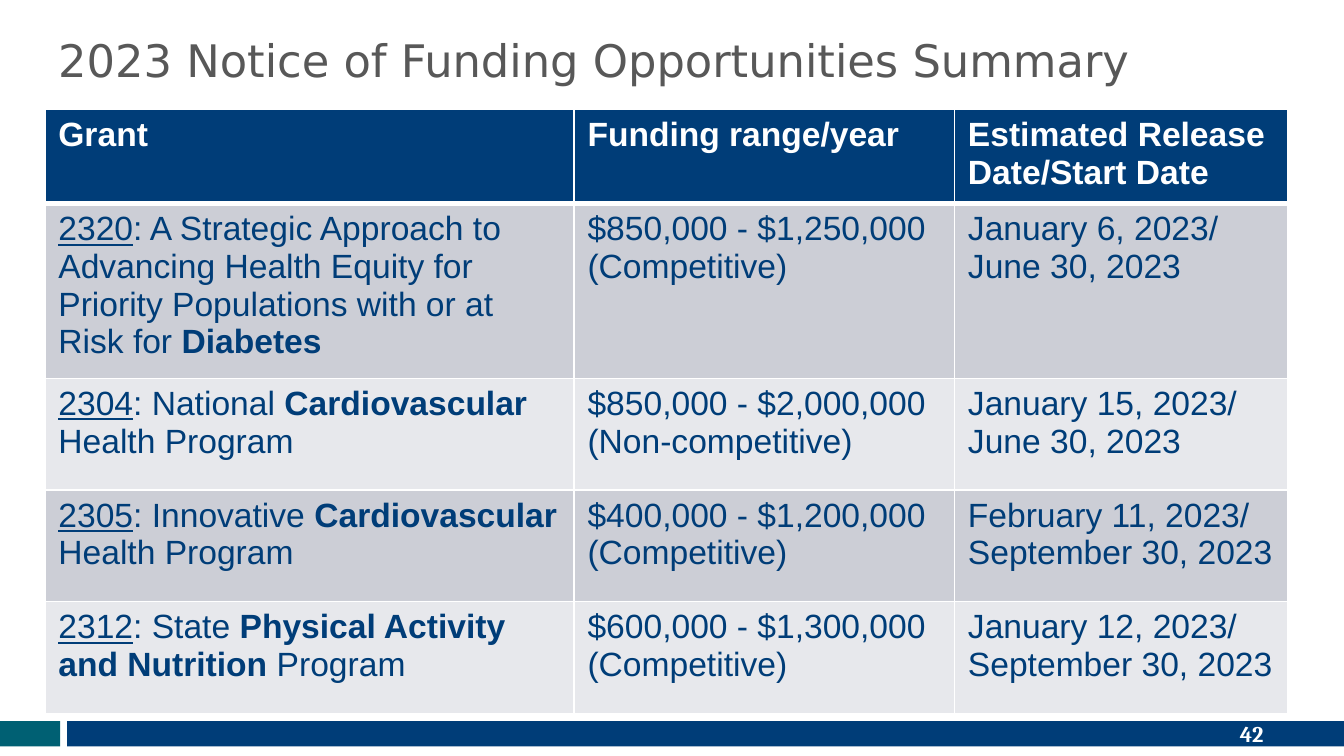
from dataclasses import dataclass

from pptx import Presentation
from pptx.dml.color import RGBColor
from pptx.enum import shapes, text
from pptx.oxml import parse_xml
from pptx.oxml import ns
from pptx.util import Cm, Pt


@dataclass(frozen=True)
class Theme:
    navy: str = "003D78"
    teal: str = "006073"
    grey: str = "585858"
    white: str = "FFFFFF"
    bands: tuple = ("CCCED6", "E7E8EC")
    title_font: str = "DejaVu Sans"
    body_font: str = "Arial"
    number_font: str = "Cambria"
    title_size: int = 24
    body_size: int = 18
    number_size: int = 12


THEME = Theme()

HEADINGS = ("Grant", "Funding range/year", "Estimated Release Date/Start Date")
# Each grant: number, words before the bold topic, topic, words after it;
# then the paragraphs of the funding and date cells
GRANTS = (
    (("2320", ": A Strategic Approach to Advancing Health Equity for "
      "Priority Populations with or at Risk for ", "Diabetes", ""),
     ("$850,000 - $1,250,000", "(Competitive)"),
     ("January 6, 2023/", "June 30, 2023")),
    (("2304", ": National ", "Cardiovascular", " Health Program"),
     ("$850,000 - $2,000,000", "(Non-competitive)"),
     ("January 15, 2023/", "June 30, 2023")),
    (("2305", ": Innovative ", "Cardiovascular", " Health Program"),
     ("$400,000 - $1,200,000 (Competitive)",),
     ("February 11, 2023/", "September 30, 2023")),
    (("2312", ": State ", "Physical Activity and Nutrition", " Program"),
     ("$600,000 - $1,300,000 (Competitive)",),
     ("January 12, 2023/", "September 30, 2023")),
)
COLUMN_WIDTHS = (10, 7.19, 6.3)
ROW_HEIGHTS = (1.78, 3, 2.11, 2.11, 2.11)


def style(font, name, size, color, bold=False):
    font.name, font.size, font.bold = name, Pt(size), bold
    font.color.rgb = RGBColor.from_string(color)


def add_line(slide, box, words, align=text.PP_ALIGN.LEFT, **look):
    frame = slide.shapes.add_textbox(*map(Cm, box)).text_frame
    frame.word_wrap = True
    frame.vertical_anchor = text.MSO_ANCHOR.MIDDLE
    line = frame.paragraphs[0]
    line.text, line.alignment = words, align
    style(line.font, **look)


def add_bar(slide, box, color):
    bar = slide.shapes.add_shape(shapes.MSO_SHAPE.RECTANGLE, *map(Cm, box))
    bar.shadow.inherit = False
    bar.fill.solid()
    bar.fill.fore_color.rgb = RGBColor.from_string(color)
    bar.line.fill.background()


def add_footer(slide, box, page):
    left, top, width, height = box
    teal_width, navy_left, number_width = 1.14, 1.27, 5.92
    add_bar(slide, (left, top, teal_width, height), THEME.teal)
    add_bar(slide, (left + navy_left, top, width - navy_left, height), THEME.navy)
    # Page number, taller than the bar and centred on it
    add_line(slide, (left + width - number_width - 1.27, top - 0.14,
                     number_width, height + 0.28),
             page, text.PP_ALIGN.RIGHT, name=THEME.number_font,
             size=THEME.number_size, color=THEME.white, bold=True)


def paint_cell(cell, fill, bottom_width):
    properties = cell._tc.get_or_add_tcPr()
    for side, width in (("L", 1), ("R", 1), ("T", 1), ("B", bottom_width)):
        properties.append(parse_xml(
            f'<a:ln{side} {ns.nsdecls("a")} w="{Pt(width)}"><a:solidFill>'
            f'<a:srgbClr val="{THEME.white}"/></a:solidFill></a:ln{side}>'))
    cell.fill.solid()
    cell.fill.fore_color.rgb = RGBColor.from_string(fill)


def write_cell(cell, lines, color, bold=False):
    cell.text = "\n".join(lines)
    for line in cell.text_frame.paragraphs:
        style(line.font, THEME.body_font, THEME.body_size, color, bold)


def write_grant(cell, parts):
    line = cell.text_frame.paragraphs[0]
    style(line.font, THEME.body_font, THEME.body_size, THEME.navy)
    for position, words in enumerate(parts):
        if words:
            run = line.add_run()
            run.text = words
            style(run.font, THEME.body_font, THEME.body_size, THEME.navy,
                  bold=position == 2)
            run.font.underline = position == 0


def add_grants_table(slide, box):
    table = slide.shapes.add_table(len(GRANTS) + 1, len(HEADINGS),
                                   *map(Cm, box)).table
    for column, width in zip(table.columns, COLUMN_WIDTHS):
        column.width = Cm(width)
    for row, height in zip(table.rows, ROW_HEIGHTS):
        row.height = Cm(height)

    # Header row
    for cell, heading in zip(table.rows[0].cells, HEADINGS):
        paint_cell(cell, THEME.navy, bottom_width=3)
        write_cell(cell, (heading,), THEME.white, bold=True)

    # One banded row for each grant
    for index, (grant, funding, dates) in enumerate(GRANTS):
        cells = list(table.rows[index + 1].cells)
        for cell in cells:
            paint_cell(cell, THEME.bands[index % 2], bottom_width=1)
        write_grant(cells[0], grant)
        write_cell(cells[1], funding, THEME.navy)
        write_cell(cells[2], dates, THEME.navy)


def main():
    deck = Presentation()
    deck.slide_width, deck.slide_height = Cm(25.4), Cm(14.29)
    slide = deck.slides.add_slide(deck.slide_layouts[6])
    add_footer(slide, (0, 13.63, 25.4, 0.48), "42")
    add_line(slide, (0.85, 0.28, 24.55, 1.68),
             "2023 Notice of Funding Opportunities Summary",
             name=THEME.title_font, size=THEME.title_size, color=THEME.grey)
    add_grants_table(slide, (0.85, 2.07, sum(COLUMN_WIDTHS), sum(ROW_HEIGHTS)))
    deck.save("out.pptx")


if __name__ == "__main__":
    main()
